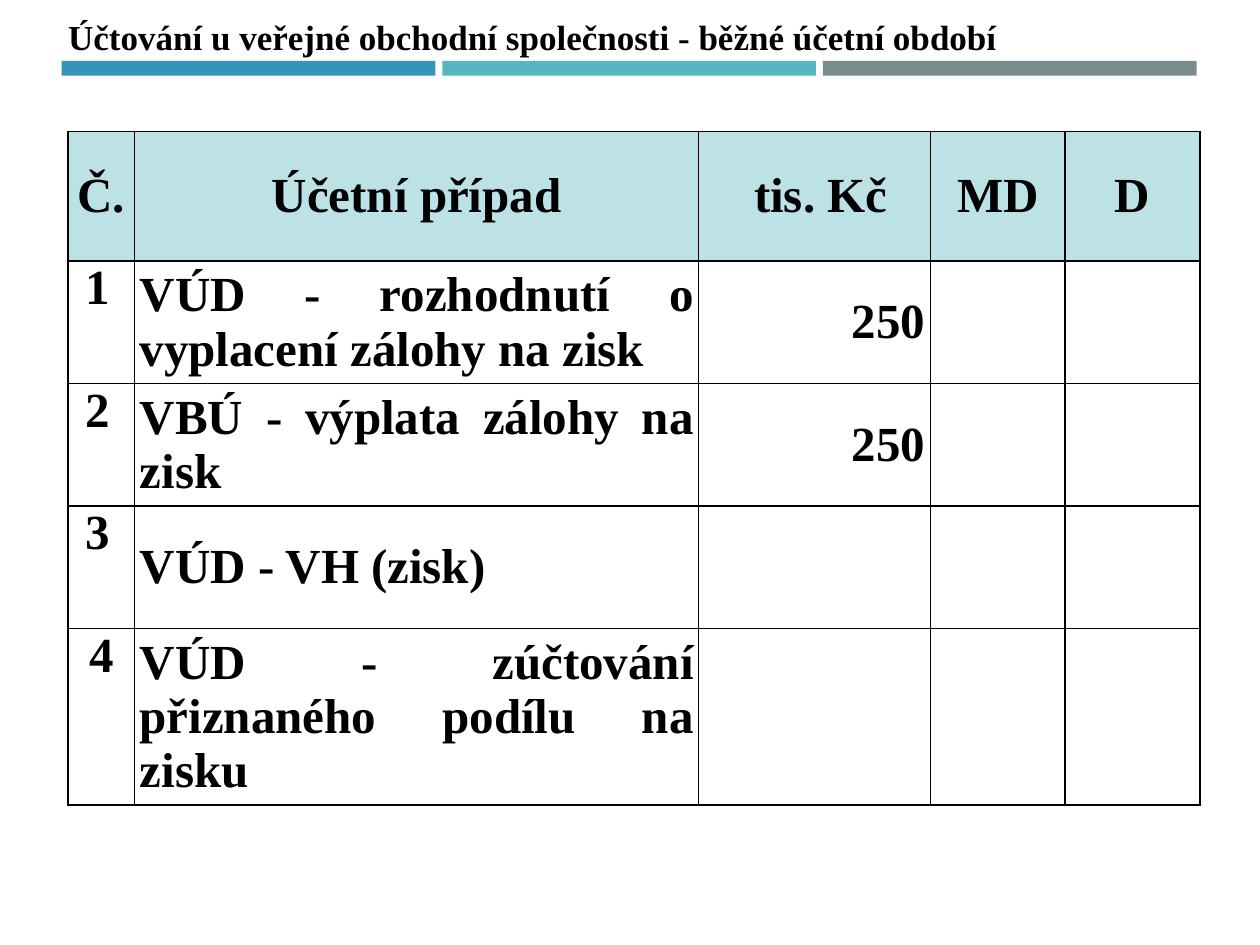
import pptx
import pptx.dml.color
import pptx.enum.shapes
import pptx.enum.text
import pptx.oxml
import pptx.oxml.ns
import pptx.util

Pt = pptx.util.Pt
ALIGN = pptx.enum.text.PP_ALIGN
ANCHOR = pptx.enum.text.MSO_ANCHOR


def color(hex_string):
    return pptx.dml.color.RGBColor.from_string(hex_string)


def write(frame, text, size=28, align=ALIGN.LEFT, font="Times New Roman", ink="000000", bold=True):
    paragraph = frame.paragraphs[0]
    paragraph.alignment = align
    run = paragraph.add_run()
    run.text = text
    run.font.name = font
    run.font.size = Pt(size)
    run.font.bold = bold
    run.font.color.rgb = color(ink)


class AccountingSlide:
    header_fill = "BCE2E6"
    border = "000000"
    inset = 3

    def __init__(self, deck):
        self.slide = deck.slides.add_slide(deck.slide_layouts[5])

    def title(self, text, left, top, width, height):
        heading = self.slide.shapes.title
        heading.left, heading.top, heading.width, heading.height = map(Pt, (left, top, width, height))
        frame = heading.text_frame
        frame.word_wrap = False
        frame.auto_size = pptx.enum.text.MSO_AUTO_SIZE.NONE
        frame.vertical_anchor = ANCHOR.TOP
        write(frame, text, size=20)

    def bar(self, left, top, width, height, fill):
        bar = self.slide.shapes.add_shape(
            pptx.enum.shapes.MSO_SHAPE.RECTANGLE, *map(Pt, (left, top, width, height)))
        bar.shadow.inherit = False
        bar.fill.solid()
        bar.fill.fore_color.rgb = color(fill)
        bar.line.fill.background()

    def outline(self, cell):
        properties = cell._tc.get_or_add_tcPr()
        namespace = pptx.oxml.ns.nsdecls("a")
        for position, side in enumerate(("lnL", "lnR", "lnT", "lnB")):
            properties.insert(position, pptx.oxml.parse_xml(
                f'<a:{side} {namespace} w="{Pt(1)}"><a:solidFill>'
                f'<a:srgbClr val="{self.border}"/></a:solidFill></a:{side}>'))

    def cell(self, cell, text, align, anchor=ANCHOR.MIDDLE, indent=0, fill=None):
        cell.margin_left = Pt(self.inset + indent)
        cell.margin_right = Pt(self.inset)
        cell.margin_top = cell.margin_bottom = 0
        cell.vertical_anchor = anchor
        if fill:
            cell.fill.solid()
            cell.fill.fore_color.rgb = color(fill)
        else:
            cell.fill.background()
        self.outline(cell)
        if text:
            write(cell.text_frame, text, align=align)

    def table(self, left, top, widths, heights, header, entries):
        table = self.slide.shapes.add_table(
            len(heights), len(widths), Pt(left), Pt(top), Pt(sum(widths)), Pt(sum(heights))).table
        table.first_row = table.horz_banding = False
        for column, width in zip(table.columns, widths):
            column.width = Pt(width)
        for row, height in zip(table.rows, heights):
            row.height = Pt(height)
        for index, label in enumerate(header):
            self.cell(table.cell(0, index), label, ALIGN.CENTER,
                      indent=7 if label == "tis. Kč" else 0, fill=self.header_fill)
        for number, (case, amount) in enumerate(entries, 1):
            last = number == len(entries)
            self.cell(table.cell(number, 0), str(number), ALIGN.CENTER if last else ALIGN.LEFT,
                      anchor=ANCHOR.TOP, indent=0 if last else 7)
            self.cell(table.cell(number, 1), case, ALIGN.JUSTIFY)
            for index, text in enumerate((amount, "", ""), 2):
                self.cell(table.cell(number, index), text, ALIGN.RIGHT)


def main():
    deck = pptx.Presentation()
    deck.slide_width, deck.slide_height = Pt(720), Pt(540)
    page = AccountingSlide(deck)
    page.title("Účtování u veřejné obchodní společnosti - běžné účetní období", 31.7, 5, 549.4, 31.7)
    for index, fill in enumerate(("3494BA", "58B6C0", "7A8C8E")):
        page.bar(35.3 + index * 217.5, 34.8, 213.5, 8.4, fill)
    page.table(
        38.8, 75,
        widths=(38.1, 322.4, 132.4, 77, 77),
        heights=(74.2, 70, 70, 70, 100.8),
        header=("Č.", "Účetní případ", "tis. Kč", "MD", "D"),
        entries=(
            ("VÚD - rozhodnutí o vyplacení zálohy na zisk", "250"),
            ("VBÚ - výplata zálohy na zisk", "250"),
            ("VÚD - VH (zisk)", ""),
            ("VÚD - zúčtování přiznaného podílu na zisku", ""),
        ),
    )
    deck.save("out.pptx")


if __name__ == "__main__":
    main()
